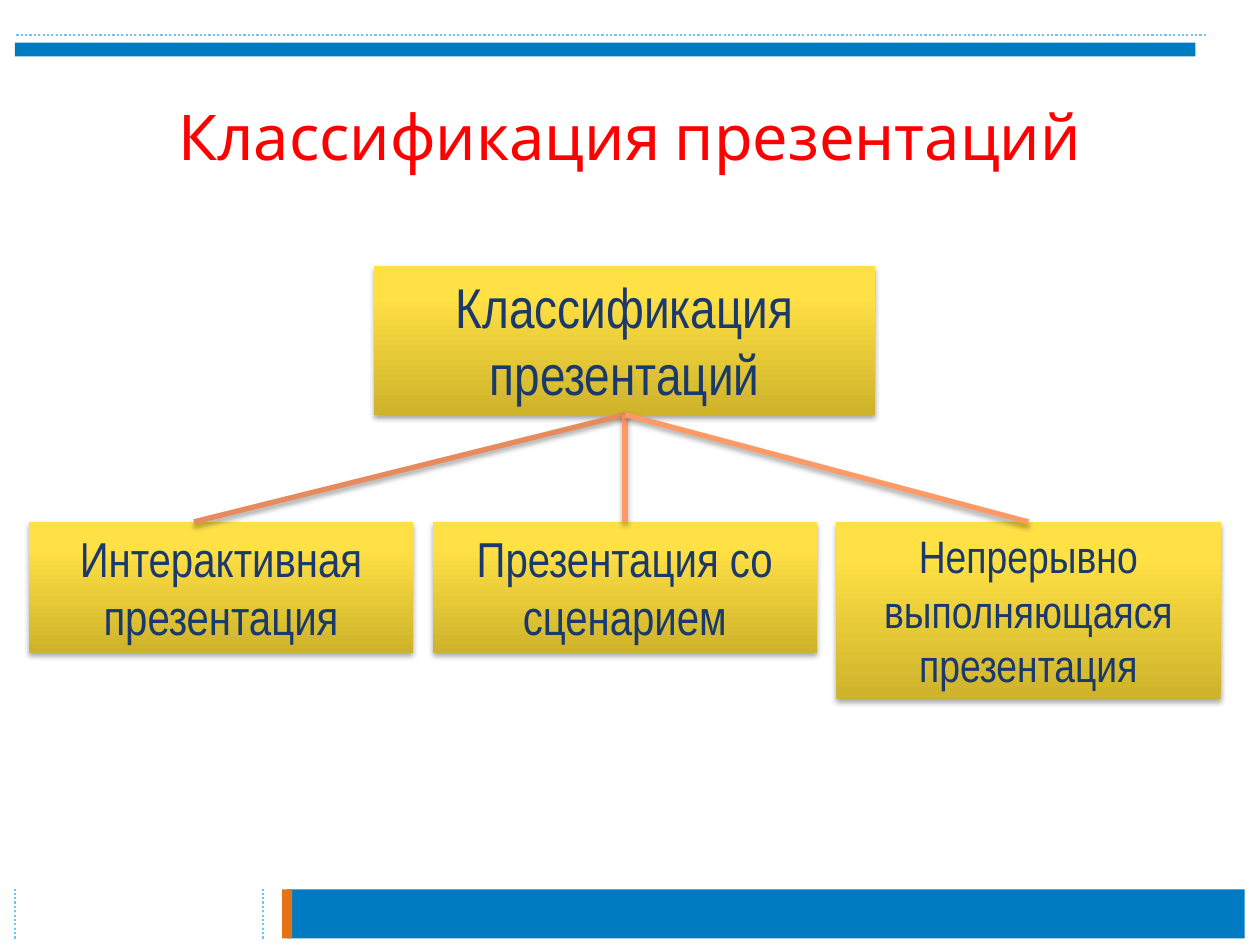
from lxml.etree import SubElement
from pptx import Presentation
from pptx.dml.color import RGBColor
from pptx.enum.dml import MSO_LINE
from pptx.enum.shapes import MSO_CONNECTOR, MSO_SHAPE
from pptx.enum.text import MSO_ANCHOR, MSO_AUTO_SIZE, PP_ALIGN
from pptx.oxml.ns import qn
from pptx.util import Cm, Pt


def rgb(value):
    return RGBColor.from_string(value)


class Deck:
    BLUE, ORANGE, SKY = "007BC2", "E37416", "71C4F0"
    RED, NAVY = "FF0000", "1A396C"
    GOLD = ("CEB32B", "FFE045")
    BRANCH, DARK_BRANCH = "FF9966", "E78A5C"
    TITLE_FONT, BOX_FONT = "Cabin", "Arial Narrow"

    def __init__(self):
        self.prs = Presentation()
        self.prs.slide_width, self.prs.slide_height = Cm(25.4), Cm(19.05)
        self.s = self.prs.slides.add_slide(self.prs.slide_layouts[6])

    def effects(self, shape, shadow):
        """Replace the theme shadow by a soft one below, or by none."""
        sp_pr = shape._element.spPr
        effects = sp_pr.find(qn("a:effectLst"))
        if effects is None:
            effects = SubElement(sp_pr, qn("a:effectLst"))
        if shadow:
            outer = SubElement(effects, qn("a:outerShdw"), blurRad="40000",
                               dist="23000", dir="5400000", rotWithShape="0")
            color = SubElement(outer, qn("a:srgbClr"), val="000000")
            SubElement(color, qn("a:alpha"), val="35000")

    def rect(self, x, y, w, h):
        sp = self.s.shapes.add_shape(MSO_SHAPE.RECTANGLE, Cm(x), Cm(y), Cm(w), Cm(h))
        sp.line.fill.background()
        sp.shadow.inherit = False
        return sp

    def bar(self, x, y, w, h, color):
        sp = self.rect(x, y, w, h)
        sp.fill.solid()
        sp.fill.fore_color.rgb = rgb(color)

    def line(self, x1, y1, x2, y2, color, width, dotted=False, shadow=False):
        c = self.s.shapes.add_connector(MSO_CONNECTOR.STRAIGHT,
                                        Cm(x1), Cm(y1), Cm(x2), Cm(y2))
        c.line.color.rgb = rgb(color)
        c.line.width = Pt(width)
        if dotted:
            c.line.dash_style = MSO_LINE.ROUND_DOT
        self.effects(c, shadow)

    def dotted(self, x1, y1, x2, y2):
        self.line(x1, y1, x2, y2, self.SKY, 1.25, dotted=True)

    def add_text(self, tf, lines, size, font, color):
        tf.word_wrap = True
        for i, text in enumerate(lines):
            p = tf.add_paragraph() if i else tf.paragraphs[0]
            p.alignment = PP_ALIGN.CENTER
            r = p.add_run()
            r.text = text
            r.font.size, r.font.name = Pt(size), font
            r.font.color.rgb = rgb(color)

    def title(self, text):
        tf = self.s.shapes.add_textbox(Cm(1.27), Cm(1.14), Cm(22.86), Cm(3.18)).text_frame
        self.add_text(tf, [text], 36, self.TITLE_FONT, self.RED)
        tf.vertical_anchor = MSO_ANCHOR.MIDDLE

    def box(self, x, y, w, h, lines, size):
        sp = self.rect(x, y, w, h)
        sp.fill.gradient()
        sp.fill.gradient_angle = 90
        for stop, color, position in zip(sp.fill.gradient_stops, self.GOLD, (0, 0.8)):
            stop.color.rgb = rgb(color)
            stop.position = position
        self.effects(sp, True)
        tf = sp.text_frame
        self.add_text(tf, lines, size, self.BOX_FONT, self.NAVY)
        tf.vertical_anchor = MSO_ANCHOR.TOP
        tf.auto_size = MSO_AUTO_SIZE.SHAPE_TO_FIT_TEXT


def main():
    d = Deck()
    d.bar(5.79, 17.93, 19.3, 0.99, d.BLUE)
    d.bar(5.69, 17.93, 0.2, 0.99, d.ORANGE)
    d.bar(0.3, 0.86, 23.8, 0.28, d.BLUE)
    for x in (0.3, 5.31):
        d.dotted(x, 18.92, x, 17.93)
    d.dotted(24.31, 0.71, 0.3, 0.71)

    d.title("Классификация презентаций")
    d.box(7.54, 5.36, 10.11, 3, ["Классификация презентаций"], 32)

    left, top, width, pitch = 0.58, 10.52, 7.75, 8.14
    kinds = [
        (["Интерактивная", "презентация"], 28, 2.64),
        (["Презентация со сценарием"], 28, 2.64),
        (["Непрерывно выполняющаяся презентация"], 26, 3.58),
    ]
    for i, (lines, size, height) in enumerate(kinds):
        d.box(left + i * pitch, top, width, height, lines, size)

    root_x, root_bottom = 12.6, 8.36
    for x, color in ((3.91, d.DARK_BRANCH), (root_x, d.BRANCH), (20.73, d.BRANCH)):
        d.line(root_x, root_bottom, x, top, color, 3, shadow=True)

    d.prs.save("out.pptx")


if __name__ == "__main__":
    main()
